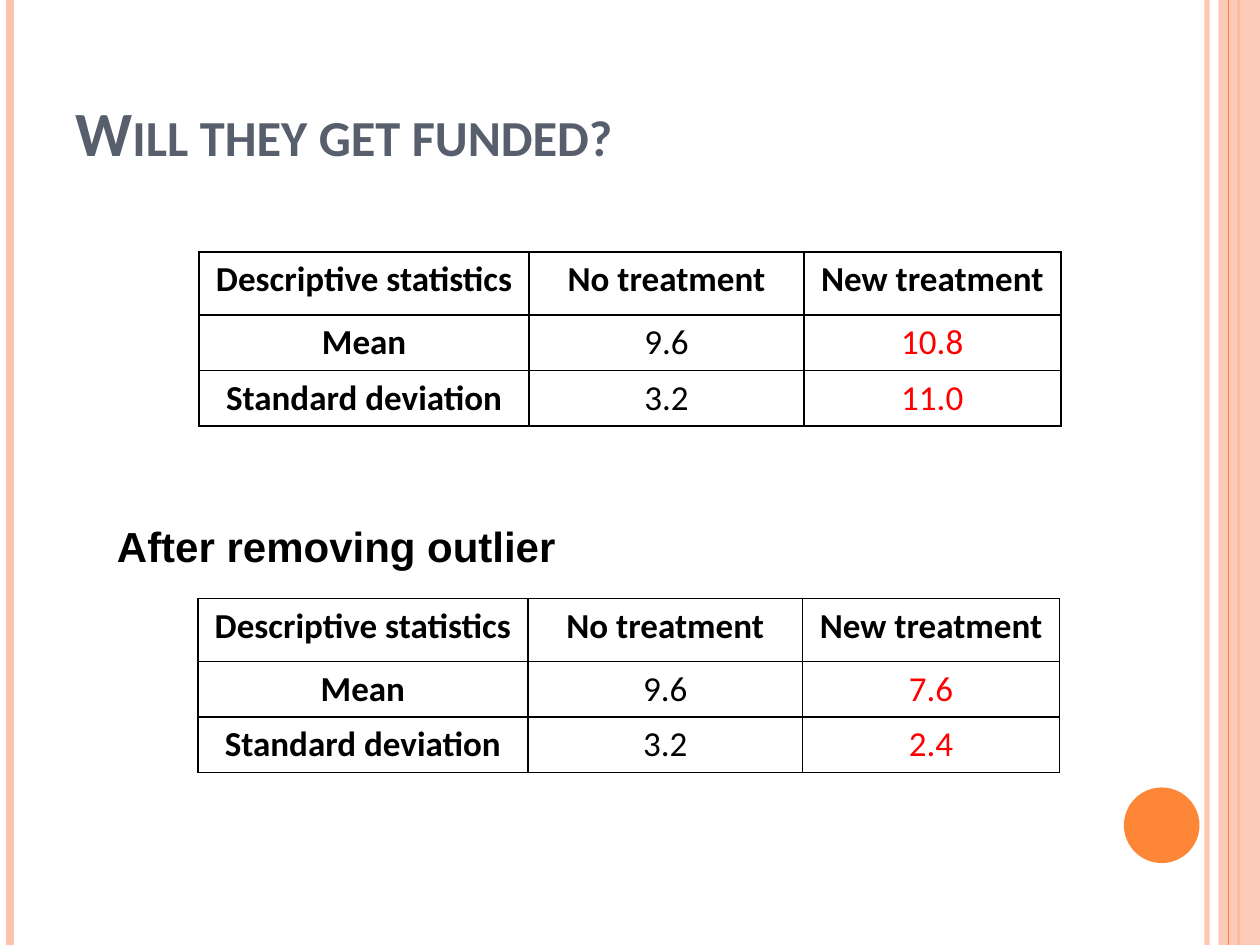
from lxml import etree
from pptx import Presentation
from pptx.dml.color import RGBColor
from pptx.enum import shapes, text
from pptx.oxml import ns
from pptx.util import Inches, Pt

PEACH, ORANGE, SLATE = "FEC3AE", "FE8637", "575F6D"
BLACK, RED = "000000", "FF0000"


def paint(color_format, color, alpha=100):
    """Apply a hex colour to a fill's fore_color, a line's or a font's color."""
    color_format.rgb = RGBColor.from_string(color)
    return alpha


def style_run(paragraph, font_name, size, color, bold):
    font = paragraph.runs[0].font
    font.name, font.size, font.bold = font_name, Pt(size), bold
    paint(font.color, color)
    return font


prs = Presentation()
prs.slide_width, prs.slide_height = Inches(10), Inches(7.5)
slide = prs.slides.add_slide(prs.slide_layouts[6])

# Side decoration, from back to front: (left, width in points, colour, opacity)
stripes = [(9.58, 3, PEACH, 93), (0.08, 4.5, PEACH, 100), (9.83, 1.5, ORANGE, 100),
           ("band", 0, PEACH, 87), (9.75, 0.75, ORANGE, 100)]
for left, weight, color, opacity in stripes:
    if left == "band":
        stripe = slide.shapes.add_shape(shapes.MSO_SHAPE.RECTANGLE, Inches(9.67), 0,
                                        Inches(0.33), prs.slide_height)
        stripe.shadow.inherit = False
        stripe.fill.solid()
        paint(stripe.fill.fore_color, color)
        stripe.line.fill.background()
    else:
        stripe = slide.shapes.add_connector(shapes.MSO_CONNECTOR.STRAIGHT, Inches(left), 0,
                                            Inches(left), prs.slide_height)
        stripe.line.width = Pt(weight)
        paint(stripe.line.color, color)
        etree.SubElement(stripe._element.spPr, ns.qn("a:effectLst"))
    if opacity < 100:
        solid_color = next(stripe._element.spPr.iter(ns.qn("a:srgbClr")))
        etree.SubElement(solid_color, ns.qn("a:alpha"), val=str(opacity * 1000))

dot = slide.shapes.add_shape(shapes.MSO_SHAPE.OVAL, Inches(8.92), Inches(6.25),
                             Inches(0.6), Inches(0.6))
dot.shadow.inherit = False
dot.fill.solid()
paint(dot.fill.fore_color, ORANGE)
dot.line.fill.background()

title = slide.shapes.add_textbox(Inches(0.5), Inches(0.14), Inches(8.17), Inches(1.25)).text_frame
title.word_wrap = True
title.vertical_anchor = text.MSO_ANCHOR.BOTTOM
title.text = "Will they get funded?"
style_run(title.paragraphs[0], "Calibri", 36, SLATE, True)
title.paragraphs[0].runs[0]._r.get_or_add_rPr().set("cap", "small")

subtitle = slide.shapes.add_textbox(Inches(0.83), Inches(4.08), Inches(3.83), Inches(0.51)).text_frame
subtitle.word_wrap = True
subtitle.text = "After removing outlier"
style_run(subtitle.paragraphs[0], "Arial", 24, BLACK, True)

# Statistics tables: (left, top, mean and deviation of the new treatment)
for left, top, new_mean, new_deviation in [(1.58, 2, "10.8", "11.0"), (1.57, 4.75, "7.6", "2.4")]:
    rows = [("Descriptive statistics", "No treatment", "New treatment"),
            ("Mean", "9.6", new_mean),
            ("Standard deviation", "3.2", new_deviation)]
    stats = slide.shapes.add_table(3, 3, Inches(left), Inches(top), Inches(6.84), Inches(1.37)).table
    stats.first_row = stats.horz_banding = False
    for column, width in zip(stats.columns, (2.62, 2.18, 2.04)):
        column.width = Inches(width)
    for row, height in zip(stats.rows, (0.5, 0.44, 0.44)):
        row.height = Inches(height)

    for r, values in enumerate(rows):
        for c, value in enumerate(values):
            cell = stats.cell(r, c)
            cell.text = value
            paragraph = cell.text_frame.paragraphs[0]
            paragraph.alignment = text.PP_ALIGN.CENTER
            is_heading = r == 0 or c == 0
            style_run(paragraph, "Calibri", 20, RED if c == 2 and r > 0 else BLACK, is_heading)
            cell.fill.background()
            for position, side in enumerate(("lnL", "lnR", "lnT", "lnB")):
                border = etree.Element(ns.qn("a:" + side), w=str(Pt(1)))
                border_fill = etree.SubElement(border, ns.qn("a:solidFill"))
                etree.SubElement(border_fill, ns.qn("a:srgbClr"), val=BLACK)
                cell._tc.get_or_add_tcPr().insert(position, border)

prs.save("out.pptx")
